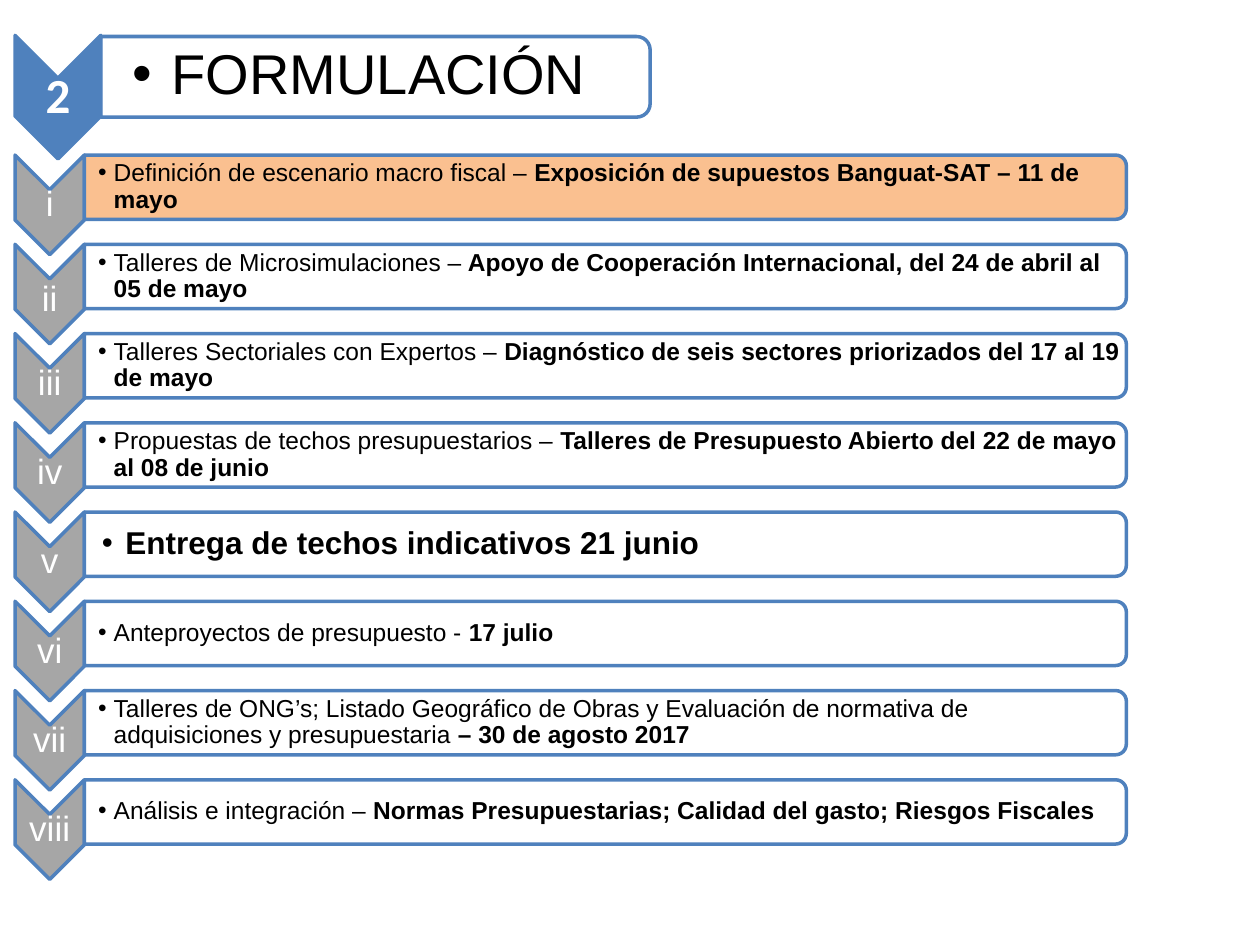
from dataclasses import dataclass

from lxml.etree import SubElement
from pptx import Presentation
from pptx.dml.color import RGBColor
from pptx.enum.shapes import MSO_SHAPE
from pptx.enum.text import MSO_ANCHOR, MSO_AUTO_SIZE, PP_ALIGN
from pptx.oxml.ns import qn
from pptx.util import Pt

BLUE, GRAY, ORANGE = "4F81BD", "A6A6A6", "FAC090"
WHITE, BLACK = "FFFFFF", "000000"
LEFT = 8.6
ROW_TOP, ROW_PITCH = 88.6, 51
BAR_LEFT, BAR_WIDTH, BAR_HEIGHT = 48.2, 595.4, 36.7


@dataclass
class Step:
    numeral: str
    plain: str
    bold: str
    fill: str = WHITE
    opacity: int = 100
    size: int = 14
    inset: float = 7.9
    indent: float = 8.9
    numeral_anchor: MSO_ANCHOR = MSO_ANCHOR.MIDDLE


STEPS = [
    Step("i", "Definición de escenario macro fiscal – ",
         "Exposición de supuestos Banguat-SAT – 11 de mayo", fill=ORANGE),
    Step("ii", "Talleres de Microsimulaciones –",
         " Apoyo de Cooperación Internacional, del 24 de abril al 05 de mayo",
         numeral_anchor=MSO_ANCHOR.TOP),
    Step("iii", "Talleres Sectoriales con Expertos – ",
         "Diagnóstico de seis sectores priorizados del 17 al 19 de mayo"),
    Step("iv", "Propuestas de techos presupuestarios – ",
         "Talleres de Presupuesto Abierto del 22 de mayo al 08 de junio"),
    Step("v", "", "Entrega de techos indicativos 21 junio",
         size=18, inset=10, indent=13.5),
    Step("vi", "Anteproyectos de presupuesto - ", "17 julio", opacity=90),
    Step("vii", "Talleres de ONG’s; Listado Geográfico de Obras y Evaluación "
         "de normativa de adquisiciones y presupuestaria ",
         "– 30 de agosto 2017", opacity=90),
    Step("viii", "Análisis e integración – ",
         "Normas Presupuestarias; Calidad del gasto; Riesgos Fiscales",
         opacity=90),
]


def color(hex_string):
    return RGBColor.from_string(hex_string)


def place(shape, left, top, width, height):
    shape.left, shape.top = Pt(left), Pt(top)
    shape.width, shape.height = Pt(width), Pt(height)


def add_turned_shape(slide, kind, left, top, width, height, fill, opacity=100):
    """Add a shape turned by 90 degrees that fills the given upright box."""
    shift = (width - height) / 2
    shape = slide.shapes.add_shape(
        kind, Pt(left + shift), Pt(top - shift), Pt(height), Pt(width))
    shape.rotation = 90
    shape.shadow.inherit = False
    shape.fill.solid()
    shape.fill.fore_color.rgb = color(fill)
    if opacity < 100:
        fill_color = shape.element.spPr.find(qn("a:solidFill"))[0]
        SubElement(fill_color, qn("a:alpha"), val=str(opacity * 1000))
    shape.line.color.rgb = color(BLUE)
    shape.line.width = Pt(2)
    return shape


def add_bullet(paragraph, indent):
    properties = paragraph._p.get_or_add_pPr()
    properties.set("marL", str(Pt(indent)))
    properties.set("indent", str(-Pt(indent)))
    SubElement(properties, qn("a:buFont"), typeface="Arial")
    SubElement(properties, qn("a:buChar"), char="•")


def write_text(shape, *runs, size, text_color, font="Arial", indent=None,
               align=PP_ALIGN.LEFT, anchor=MSO_ANCHOR.MIDDLE, inset=0.7,
               left_inset=None):
    """Fill a shape with one paragraph made of (text, bold) runs."""
    frame = shape.text_frame
    frame.word_wrap = True
    frame.auto_size = MSO_AUTO_SIZE.NONE
    frame.vertical_anchor = anchor
    frame.margin_left = Pt(inset if left_inset is None else left_inset)
    frame.margin_top = frame.margin_right = frame.margin_bottom = Pt(inset)
    paragraph = frame.paragraphs[0]
    if indent is not None:
        add_bullet(paragraph, indent)
    paragraph.alignment = align
    paragraph.line_spacing = 0.9
    for text, bold in runs:
        if text:
            run = paragraph.add_run()
            run.text = text
            run.font.name = font
            run.font.size = Pt(size)
            run.font.bold = bold
            run.font.color.rgb = color(text_color)


def add_text(slide, left, top, width, height, *runs, **text_format):
    box = slide.shapes.add_textbox(Pt(left), Pt(top), Pt(width), Pt(height))
    write_text(box, *runs, **text_format)


def add_header(slide):
    add_turned_shape(slide, MSO_SHAPE.CHEVRON, LEFT, 20.2, 49, 70.6, BLUE)
    add_text(slide, LEFT, 45.4, 49, 20.9, ("2", True), size=28,
             text_color=WHITE, font="Calibri", align=PP_ALIGN.CENTER, inset=1.4)
    bar = add_turned_shape(slide, MSO_SHAPE.ROUND_2_SAME_RECTANGLE,
                           57.6, 20.9, 313.9, 46.1, WHITE, opacity=90)
    title = slide.shapes.title
    place(title, 57.6, 23, 311, 41)
    write_text(title, ("FORMULACIÓN", False), size=32, text_color=BLACK,
               indent=22.5, inset=1.4, left_inset=18)
    bar.element.addnext(title.element)


def add_step(slide, step, top):
    add_turned_shape(slide, MSO_SHAPE.CHEVRON, LEFT, top, 39.6, 56.9, GRAY)
    add_text(slide, LEFT, top + 20.2, 39.6, 17.3, (step.numeral, False),
             size=20, text_color=WHITE, align=PP_ALIGN.CENTER,
             anchor=step.numeral_anchor)
    add_turned_shape(slide, MSO_SHAPE.ROUND_2_SAME_RECTANGLE, BAR_LEFT, top,
                     BAR_WIDTH, BAR_HEIGHT, step.fill, step.opacity)
    add_text(slide, BAR_LEFT, top + 1.8, BAR_WIDTH - 2, BAR_HEIGHT - 3.6,
             (step.plain, False), (step.bold, True), size=step.size,
             text_color=BLACK, indent=step.indent, left_inset=step.inset)


def main():
    presentation = Presentation()
    presentation.slide_width, presentation.slide_height = Pt(720), Pt(540)
    slide = presentation.slides.add_slide(presentation.slide_layouts[5])
    add_header(slide)
    for index, step in enumerate(STEPS):
        add_step(slide, step, ROW_TOP + index * ROW_PITCH)
    presentation.save("out.pptx")


if __name__ == "__main__":
    main()
